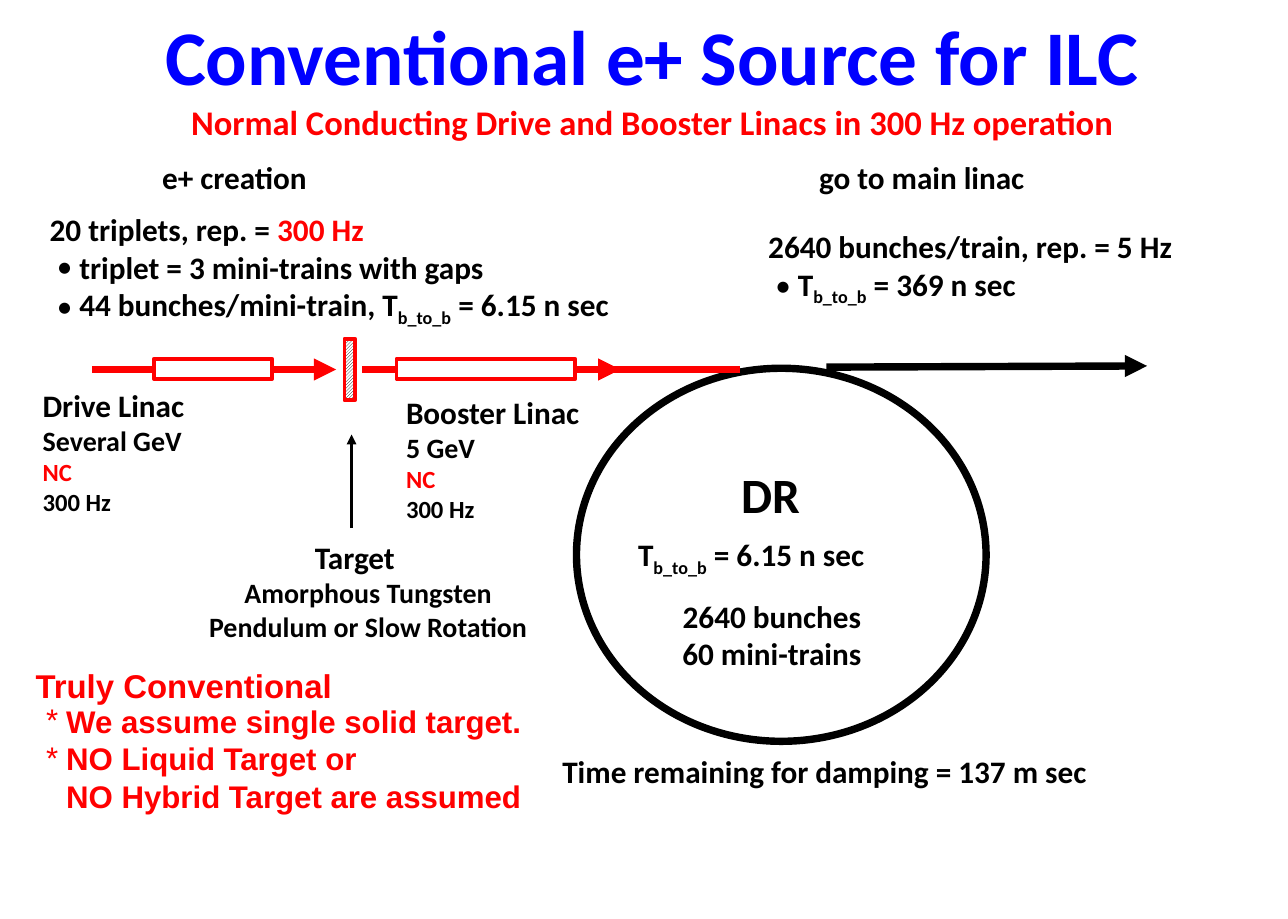
import pptx
import pptx.util
import pptx.dml.color
import pptx.enum.dml
import pptx.enum.shapes
import pptx.enum.text
import pptx.oxml
import pptx.oxml.ns

Inches = pptx.util.Inches
Pt = pptx.util.Pt
qn = pptx.oxml.ns.qn
kinds = pptx.enum.shapes.MSO_SHAPE
LEFT = pptx.enum.text.PP_ALIGN.LEFT
MID = pptx.enum.text.PP_ALIGN.CENTER
hues = {"black": "000000", "red": "FF0000", "blue": "0000FF", "white": "FFFFFF"}


def tint(name):
    return pptx.dml.color.RGBColor.from_string(hues[name])


def add_tag(host, tag, **attrs):
    item = pptx.oxml.parse_xml(f'<{tag} {pptx.oxml.ns.nsdecls("a")}/>')
    for key, val in attrs.items():
        item.set(key, val)
    host.append(item)


deck = pptx.Presentation()
deck.slide_width = Inches(10.88)
deck.slide_height = Inches(7.76)
slide = deck.slides.add_slide(deck.slide_layouts[6])
shapes = slide.shapes

ring = shapes.add_shape(kinds.OVAL, Inches(4.87), Inches(3.11), Inches(3.46), Inches(3.15))
ring.shadow.inherit = False
ring.fill.background()
ring.line.color.rgb = tint("black")
ring.line.width = Pt(4.5)

beam = 3.12
lines = [
    (6.98, 3.1, 9.69, 3.09, "black", 4.5, True),
    (5.04, beam, 6.25, beam, "red", 4.5, False),
    (0.78, beam, 2.84, beam, "red", 4.5, True),
    (3.06, beam, 5.24, beam, "red", 4.5, True),
    (2.97, 4.46, 2.97, 3.67, "black", 1.5, True),
]
for x1, y1, x2, y2, hue, width, arrow in lines:
    line = shapes.add_connector(
        pptx.enum.shapes.MSO_CONNECTOR.STRAIGHT,
        Inches(x1), Inches(y1), Inches(x2), Inches(y2))
    line.line.color.rgb = tint(hue)
    line.line.width = Pt(width)
    if arrow:
        add_tag(line.line._get_or_add_ln(), "a:tailEnd", type="triangle")
    add_tag(line._element.spPr, "a:effectLst")

blocks = [
    (1.3, 3.03, 1, 0.17, False),
    (2.91, 2.86, 0.09, 0.52, True),
    (3.35, 3.03, 1.51, 0.17, False),
]
for x, y, w, h, hatch in blocks:
    block = shapes.add_shape(kinds.RECTANGLE, Inches(x), Inches(y), Inches(w), Inches(h))
    block.shadow.inherit = False
    block.line.color.rgb = tint("red")
    block.line.width = Pt(2.25)
    if hatch:
        block.fill.patterned()
        block.fill.pattern = pptx.enum.dml.MSO_PATTERN.LIGHT_UPWARD_DIAGONAL
        block.fill.fore_color.rgb = tint("black")
        block.fill.back_color.rgb = tint("white")
    else:
        block.fill.solid()
        block.fill.fore_color.rgb = tint("white")

none = ("", 0, 0)
dot = ("•", 0.25, -0.19)
star = ("*", 0.17, -0.17)
inset = ("", 0.17, 0)
sub = ("b_to_b", "black", True)


def plain(size, text, hue="black", mark=none):
    return size, mark, [(text, hue, False)]


texts = [
    (0.31, 1.73, 6.05, 1.07, LEFT, "Calibri", [
        (19, none, [("20 triplets, rep. = ", "black", False), ("300 Hz", "red", False)]),
        plain(19, "triplet = 3 mini-trains with gaps", mark=dot),
        (19, dot, [("44 bunches/mini-train, T", "black", False), sub,
                   (" = 6.15 n sec", "black", False)])]),
    (6.15, 3.87, 1.17, 0.61, LEFT, "Calibri", [plain(30, "DR")]),
    (5.28, 4.47, 2.86, 0.43, LEFT, "Calibri", [
        (19, none, [("T", "black", False), sub, (" = 6.15 n sec", "black", False)])]),
    (6.38, 1.87, 4.36, 0.75, LEFT, "Calibri", [
        plain(19, "2640 bunches/train, rep. = 5 Hz"),
        (19, dot, [("T", "black", False), sub, (" = 369 n sec", "black", False)])]),
    (1.26, 1.29, 2.99, 0.43, LEFT, "Calibri", [plain(19, "e+ creation")]),
    (6.81, 1.29, 3.85, 0.43, LEFT, "Calibri", [plain(19, "go to main linac")]),
    (4.64, 6.3, 6.15, 0.43, LEFT, "Calibri", [
        plain(19, "Time remaining for damping = 137 m sec")]),
    (2.55, 4.5, 1.19, 0.43, LEFT, "Calibri", [plain(19, "Target")]),
    (0.54, 4.81, 5.14, 0.68, MID, "Calibri", [
        plain(17, "Amorphous Tungsten"), plain(17, "Pendulum or Slow Rotation")]),
    (5.37, 4.99, 2.3, 0.75, MID, "Calibri", [
        plain(19, "2640 bunches"), plain(19, "60 mini-trains")]),
    (0.67, 0.02, 9.68, 1.25, MID, "Calibri", [
        plain(47, "Conventional e+ Source for ILC", "blue"),
        plain(21, "Normal Conducting Drive and Booster Linacs in 300 Hz operation", "red")]),
    (0.19, 5.57, 6.25, 0.43, LEFT, "Arial", [plain(20, "Truly Conventional", "red")]),
    (0.28, 5.88, 6.73, 1.07, LEFT, "Arial", [
        plain(19, "We assume single solid target.", "red", star),
        plain(19, "NO Liquid Target or", "red", star),
        plain(19, "NO Hybrid Target are assumed", "red", inset)]),
]
linacs = [
    (3.32, 3.27, 2.18, "Booster Linac", "5 GeV"),
    (0.25, 3.21, 2.79, "Drive Linac", "Several GeV"),
]
for x, y, w, name, power in linacs:
    texts.append((x, y, w, 1.22, LEFT, "Calibri", [
        plain(19, name), plain(17, power), plain(15, "NC", "red"), plain(15, "300 Hz")]))

frame = {
    "word_wrap": True,
    "margin_left": Inches(0.11), "margin_right": Inches(0.11),
    "margin_top": Inches(0.05), "margin_bottom": Inches(0.05),
}
for x, y, w, h, align, face, rows in texts:
    body = shapes.add_textbox(Inches(x), Inches(y), Inches(w), Inches(h)).text_frame
    for key, val in frame.items():
        setattr(body, key, val)
    for i, (size, (mark, left, hang), runs) in enumerate(rows):
        para = body.add_paragraph() if i else body.paragraphs[0]
        para.alignment = align
        props = para._p.get_or_add_pPr()
        if left:
            props.set("marL", str(Inches(left)))
            props.set("indent", str(Inches(hang)))
        if mark:
            add_tag(props, "a:buFont", typeface=face)
            add_tag(props, "a:buChar", char=mark)
        for text, hue, low in runs:
            run = para.add_run()
            run.text = text
            for key, val in {"size": Pt(size), "name": face, "bold": True}.items():
                setattr(run.font, key, val)
            run.font.color.rgb = tint(hue)
            if low:
                run._r.get_or_add_rPr().set("baseline", "-25000")

deck.save("out.pptx")
